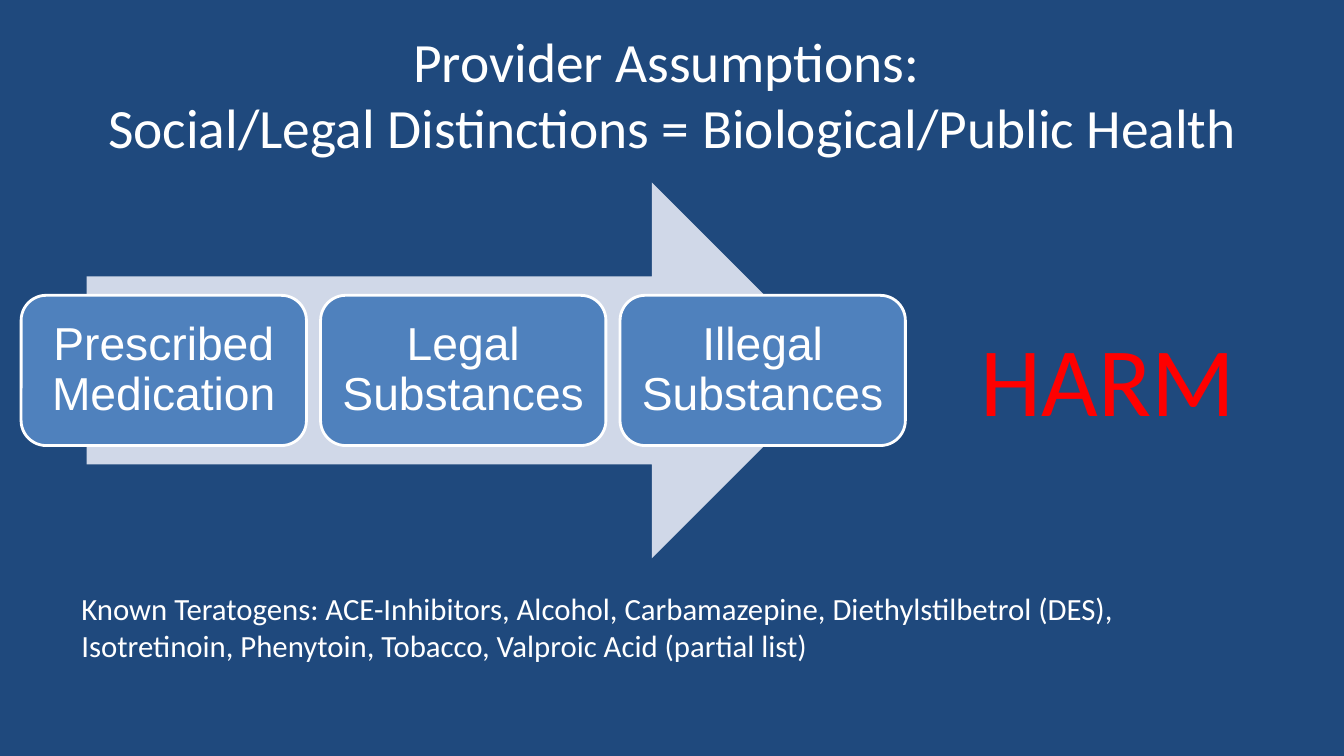
"""Builds the slide on provider assumptions about substances and harm."""
from pptx import Presentation
from pptx.dml.color import RGBColor
from pptx.enum.shapes import MSO_SHAPE
from pptx.enum.text import MSO_ANCHOR, MSO_AUTO_SIZE, PP_ALIGN
from pptx.util import Emu, Pt

ARROW = MSO_SHAPE.RIGHT_ARROW
ROUNDED = MSO_SHAPE.ROUNDED_RECTANGLE
MIDDLE = MSO_ANCHOR.MIDDLE
CENTER, LEFT = PP_ALIGN.CENTER, PP_ALIGN.LEFT
NO_FIT, GROW = MSO_AUTO_SIZE.NONE, MSO_AUTO_SIZE.SHAPE_TO_FIT_TEXT

THEME = {
    "background": RGBColor.from_string("1F497D"),
    "arrow": RGBColor.from_string("D0D8E8"),
    "card": RGBColor.from_string("4F81BD"),
    "light": RGBColor.from_string("FFFFFF"),
    "harm": RGBColor.from_string("FF0000"),
    "title_size": 39.6,
    "card_size": 33,
    "harm_size": 70,
    "note_size": 22,
    "font": "Calibri",
    "card_font": "Arial",
}
EMU_PER_PX = 9144
TITLE_ONLY = 5


def px(*lengths):
    return [Emu(length * EMU_PER_PX) for length in lengths]


def write(para, text, size, color="light", font="font", align=LEFT):
    para.alignment = align
    span = para.add_run()
    span.text = text
    span.font.size = Pt(THEME[size])
    span.font.name = THEME[font]
    span.font.color.rgb = THEME[color]


deck = Presentation()
deck.slide_width, deck.slide_height = px(1333, 750)
page = deck.slides.add_slide(deck.slide_layouts[TITLE_ONLY])
page.background.fill.solid()
page.background.fill.fore_color.rgb = THEME["background"]

title = page.shapes.title
title.left, title.top, title.width, title.height = px(67, 30, 1200, 125)
title.text_frame.auto_size = NO_FIT
title.text_frame.vertical_anchor = MIDDLE
para = title.text_frame.paragraphs[0]
write(para, "Provider Assumptions: ", "title_size", align=CENTER)
para.add_line_break()
write(para, "Social/Legal Distinctions = Biological/Public Health", "title_size", align=CENTER)

arrow = page.shapes.add_shape(ARROW, *px(86, 181, 747, 373))
arrow.shadow.inherit = False
arrow.fill.solid()
arrow.fill.fore_color.rgb = THEME["arrow"]
arrow.line.fill.background()

card_left, card_pitch = 21, 297
for index, label in enumerate(["Prescribed Medication", "Legal Substances", "Illegal Substances"]):
    card = page.shapes.add_shape(ROUNDED, *px(card_left + index * card_pitch, 293, 283, 149))
    card.shadow.inherit = False
    card.fill.solid()
    card.fill.fore_color.rgb = THEME["card"]
    card.line.color.rgb = THEME["light"]
    card.line.width = Pt(2)
    frame = card.text_frame
    frame.word_wrap = True
    frame.vertical_anchor = MIDDLE
    frame.margin_left, frame.margin_top, frame.margin_right, frame.margin_bottom = px(13, 13, 13, 13)
    para = frame.paragraphs[0]
    para.line_spacing = 0.9
    write(para, label, "card_size", font="card_font", align=CENTER)

captions = [
    ((963, 311, 304, 128), "HARM", "harm_size", "harm"),
    ((71, 580, 1192, 84),
     "Known Teratogens: ACE-Inhibitors, Alcohol, Carbamazepine, Diethylstilbetrol (DES), "
     "Isotretinoin, Phenytoin, Tobacco, Valproic Acid (partial list)", "note_size", "light"),
]
for bounds, text, size, color in captions:
    box = page.shapes.add_textbox(*px(*bounds))
    box.text_frame.word_wrap = True
    box.text_frame.auto_size = GROW
    write(box.text_frame.paragraphs[0], text, size, color)

deck.save("out.pptx")
